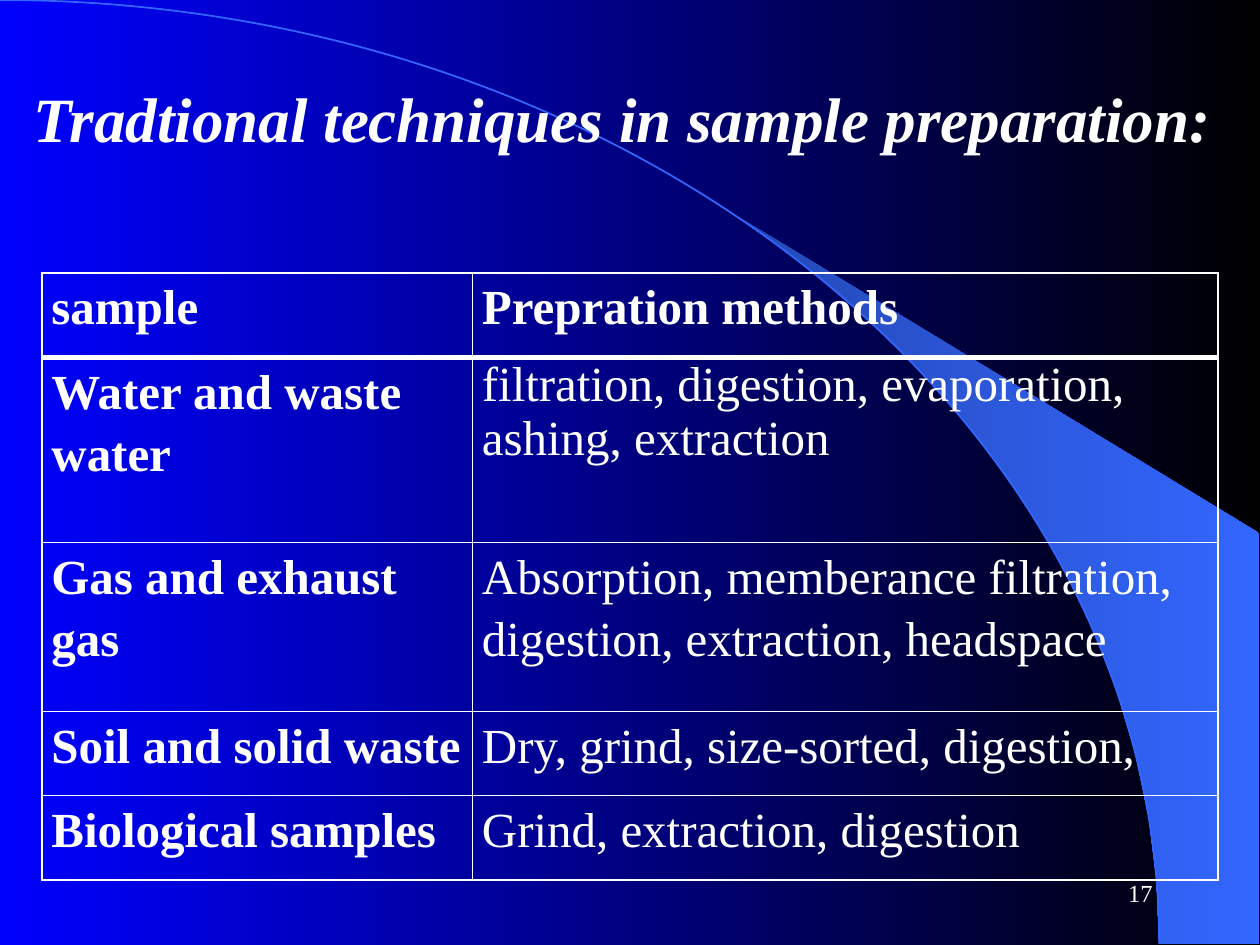
import math
from lxml import etree
from pptx import Presentation
from pptx.dml.color import RGBColor
from pptx.enum import text
from pptx.oxml import ns
from pptx.util import Pt

WHITE = RGBColor(0xFF, 0xFF, 0xFF)
BLACK = RGBColor(0x00, 0x00, 0x00)
BLUE = RGBColor(0x00, 0x00, 0xFF)
SKY = RGBColor(0x33, 0x66, 0xFF)
DEEP_SKY = RGBColor(0x24, 0x49, 0xB6)
FONT = "Times New Roman"

# Quarter ellipse, centred on the lower left corner
ARC_WIDTH, ARC_HEIGHT = 662.4, 539.3
ARC_HANDLE = 0.55
WEDGE_TIP_X, WEDGE_RIGHT, WEDGE_SHOULDER_Y = 424, 719.3, 304.6
WEDGE_STEPS = 13

COLUMNS = [246, 426]
ROW_HEIGHTS = [48.25, 105.75, 96.5, 48.25, 48.25]
METHODS = [
    ("sample", "Prepration methods"),
    ("Water and waste water",
     "filtration, digestion, evaporation, ashing, extraction"),
    ("Gas and exhaust gas",
     "Absorption, memberance filtration, digestion, extraction, headspace"),
    ("Soil and solid waste", "Dry, grind, size-sorted, digestion,"),
    ("Biological samples", "Grind, extraction, digestion"),
]


def wedge_edge():
    """Points along the ellipse from the wedge's tip to the bottom."""
    start = math.acos(WEDGE_TIP_X / ARC_WIDTH)
    angles = [start * (1 - step / WEDGE_STEPS)
              for step in range(WEDGE_STEPS + 1)]
    return [(ARC_WIDTH * math.cos(a), ARC_HEIGHT * (1 - math.sin(a)))
            for a in angles]


class SlideBuilder:
    def __init__(self, slide):
        self.slide = slide

    def gradient(self, fill, first, last):
        fill.gradient()
        fill.gradient_angle = 0
        for stop, color in zip(fill.gradient_stops, (first, last)):
            stop.color.rgb = color

    def outline(self, points, close):
        (x, y), *rest = [(Pt(px), Pt(py)) for px, py in points]
        builder = self.slide.shapes.build_freeform(x, y, scale=1.0)
        builder.add_line_segments(rest, close=close)
        shape = builder.convert_to_shape()
        shape.shadow.inherit = False
        return shape

    def arc(self, width, height, color):
        shape = self.outline([(0, 0), (width, height)], False)
        # Turn the straight segment into one Bezier curve
        segment = next(shape.element.iter(ns.qn("a:lnTo")))
        segment.tag = ns.qn("a:cubicBezTo")
        handles = [(width * ARC_HANDLE, 0), (width, height * (1 - ARC_HANDLE))]
        for index, (x, y) in enumerate(handles):
            point = etree.Element(ns.qn("a:pt"), x=str(Pt(x)), y=str(Pt(y)))
            segment.insert(index, point)
        shape.fill.background()
        shape.line.color.rgb = color
        shape.line.width = Pt(1)

    def run(self, paragraph, words, size, bold=False, italic=False):
        run = paragraph.add_run()
        run.text = words
        font = run.font
        font.name, font.size = FONT, Pt(size)
        font.bold, font.italic = bold, italic
        font.color.rgb = WHITE

    def label(self, words, box, size, align, anchor, **style):
        frame = self.slide.shapes.add_textbox(*map(Pt, box)).text_frame
        frame.word_wrap = True
        frame.vertical_anchor = anchor
        frame.paragraphs[0].alignment = align
        self.run(frame.paragraphs[0], words, size, **style)

    def border(self, cell, side, width):
        line = etree.SubElement(cell._tc.get_or_add_tcPr(),
                                ns.qn("a:ln" + side), w=str(Pt(width)))
        fill = etree.SubElement(line, ns.qn("a:solidFill"))
        etree.SubElement(fill, ns.qn("a:srgbClr"), val=str(WHITE))

    def cell(self, cell, words, bold, spacing, top, bottom):
        cell.margin_left = cell.margin_right = Pt(5.4)
        cell.margin_top = cell.margin_bottom = 0
        for side, width in (("L", 1), ("R", 1), ("T", top), ("B", bottom)):
            self.border(cell, side, width)
        cell.fill.background()
        paragraph = cell.text_frame.paragraphs[0]
        paragraph.line_spacing = spacing
        self.run(paragraph, words, 28, bold=bold)

    def table(self, rows, left, top):
        table = self.slide.shapes.add_table(
            len(rows), len(COLUMNS), Pt(left), Pt(top),
            Pt(sum(COLUMNS)), Pt(sum(ROW_HEIGHTS))).table
        table.first_row = table.horz_banding = False
        for column, width in zip(table.columns, COLUMNS):
            column.width = Pt(width)
        for r, (row, height) in enumerate(zip(rows, ROW_HEIGHTS)):
            table.rows[r].height = Pt(height)
            for c, words in enumerate(row):
                self.cell(table.cell(r, c), words,
                          bold=r == 0 or c == 0,
                          spacing=1.0 if (r, c) == (1, 1) else 1.15,
                          top=3 if r == 1 else 1,
                          bottom=3 if r == 0 else 1)


def main():
    deck = Presentation()
    deck.slide_width, deck.slide_height = Pt(720), Pt(540)
    page = SlideBuilder(deck.slides.add_slide(deck.slide_layouts[6]))

    # Background with wedge and arc
    page.gradient(page.slide.background.fill, BLUE, BLACK)
    wedge = page.outline(wedge_edge() + [
        (WEDGE_RIGHT, ARC_HEIGHT), (WEDGE_RIGHT, WEDGE_SHOULDER_Y)], True)
    page.gradient(wedge.fill, DEEP_SKY, SKY)
    wedge.line.fill.background()
    page.arc(ARC_WIDTH, ARC_HEIGHT, SKY)

    # Slide number and title
    page.label("17", (516, 492, 149.75, 36), 14, text.PP_ALIGN.RIGHT,
               text.MSO_ANCHOR.MIDDLE)
    page.label("Tradtional techniques in sample preparation:",
               (12.25, 42, 696, 51), 36, text.PP_ALIGN.LEFT,
               text.MSO_ANCHOR.TOP, bold=True, italic=True)

    # Methods for each kind of sample
    page.table(METHODS, 24, 156)
    deck.save("out.pptx")


if __name__ == "__main__":
    main()
